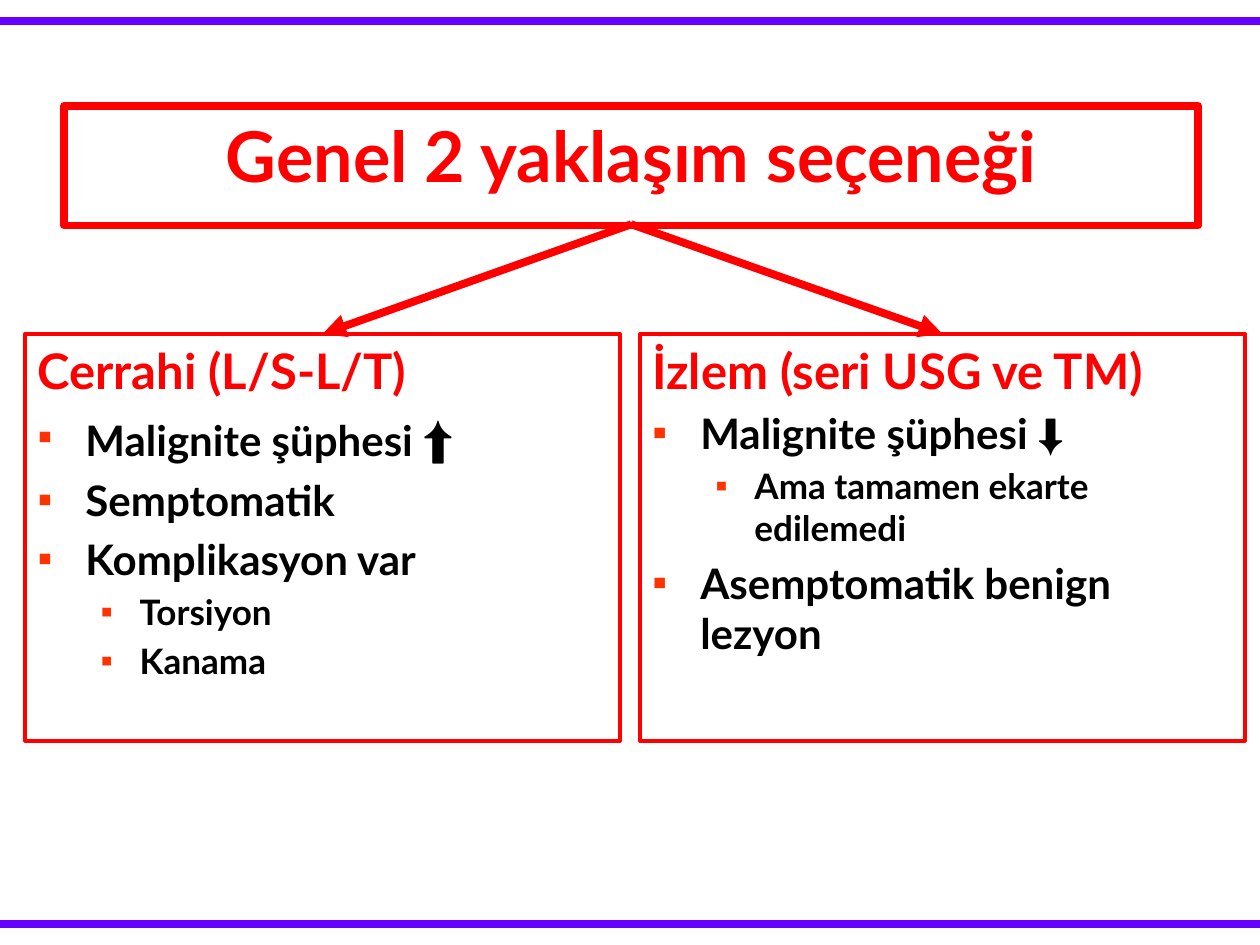
from dataclasses import dataclass

from lxml import etree
from pptx import Presentation
from pptx.dml.color import RGBColor
from pptx.enum.shapes import MSO_CONNECTOR, MSO_SHAPE
from pptx.enum.text import MSO_ANCHOR, PP_ALIGN
from pptx.oxml.ns import qn
from pptx.util import Inches, Pt

LINE = MSO_CONNECTOR.STRAIGHT
RECT = MSO_SHAPE.RECTANGLE
TOP = MSO_ANCHOR.TOP
LEFT, CENTER = PP_ALIGN.LEFT, PP_ALIGN.CENTER


@dataclass(frozen=True)
class Theme:
    """Hold the colours, fonts and type sizes."""
    red: str = "FF0000"
    violet: str = "6600FF"
    orange: str = "FF3300"
    black: str = "000000"
    font: str = "Lato"
    sign: str = "Times New Roman"
    title: int = 40
    head: int = 28
    items: tuple = (24, 20)
    thick: float = 4.5
    thin: float = 2.25


THEME = Theme()
INDENTS = ((0.38, -0.38), (0.81, -0.31))
SURGERY = (
    (0, "Malignite şüphesi ", "⬆", 28),
    (0, "Semptomatik"),
    (0, "Komplikasyon var"),
    (1, "Torsiyon"),
    (1, "Kanama"),
)
WATCH = (
    (0, "Malignite şüphesi ", "⬇", 24),
    (1, "Ama tamamen ekarte edilemedi"),
    (0, "Asemptomatik benign lezyon"),
)


def add_line(slide, start, end, color, arrow=False):
    """Draw a thick line, with an arrowhead at its end if asked."""
    line = slide.shapes.add_connector(LINE, *map(Inches, start + end))
    line.line.color.rgb = RGBColor.from_string(color)
    line.line.width = Pt(THEME.thick)
    if arrow:
        tail = etree.SubElement(line.line._get_or_add_ln(), qn("a:tailEnd"))
        tail.set("type", "triangle")
    etree.SubElement(line._element.spPr, qn("a:effectLst"))


def add_box(slide, place, width):
    """Draw a red frame and return its text frame."""
    box = slide.shapes.add_shape(RECT, *map(Inches, place))
    box.shadow.inherit = False
    box.fill.background()
    box.line.color.rgb = RGBColor.from_string(THEME.red)
    box.line.width = Pt(width)
    frame = box.text_frame
    frame.word_wrap = True
    frame.vertical_anchor = TOP
    return frame


def add_run(para, text, size, color, font=THEME.font, bold=True):
    """Add one styled run to a paragraph."""
    run = para.add_run()
    run.text = text
    run.font.size = Pt(size)
    run.font.name = font
    run.font.bold = bold
    run.font.color.rgb = RGBColor.from_string(color)


def add_bullet(para, level):
    """Give a paragraph its indent and square bullet."""
    para.level = level
    props = para._p.get_or_add_pPr()
    for name, value in zip(("marL", "indent"), INDENTS[level]):
        props.set(name, str(Inches(value)))
    color = etree.SubElement(props, qn("a:buClr"))
    etree.SubElement(color, qn("a:srgbClr")).set("val", THEME.orange)
    etree.SubElement(props, qn("a:buFont")).set("typeface", THEME.sign)
    etree.SubElement(props, qn("a:buChar")).set("char", "▪")


def add_panel(slide, place, head, items):
    """Add a framed heading with its bullet list."""
    frame = add_box(slide, place, THEME.thin)
    first = frame.paragraphs[0]
    first.alignment = LEFT
    add_run(first, head, THEME.head, THEME.red)
    for level, text, *sign in items:
        para = frame.add_paragraph()
        para.alignment = LEFT
        size = THEME.items[level]
        para.space_before = Pt(size * 0.2)
        add_bullet(para, level)
        add_run(para, text, size, THEME.black)
        if sign:
            add_run(para, *sign, THEME.black, THEME.sign, False)


def main():
    """Build and save the slide."""
    deck = Presentation()
    deck.slide_width, deck.slide_height = Inches(10), Inches(7.5)
    slide = deck.slides.add_slide(deck.slide_layouts[6])
    for y in (0.17, 7.33):
        add_line(slide, (0, y), (10, y), THEME.violet)
    title = add_box(slide, (0.51, 0.84, 9, 0.95), THEME.thick).paragraphs[0]
    title.alignment = CENTER
    add_run(title, "Genel 2 yaklaşım seçeneği", THEME.title, THEME.red)
    add_panel(slide, (0.2, 2.65, 4.72, 3.23), "Cerrahi (L/S-L/T)", SURGERY)
    add_panel(slide, (5.08, 2.65, 4.8, 3.23), "İzlem (seri USG ve TM)", WATCH)
    for x in (7.48, 2.56):
        add_line(slide, (5.01, 1.78), (x, 2.65), THEME.red, True)
    deck.save("out.pptx")


if __name__ == "__main__":
    main()
